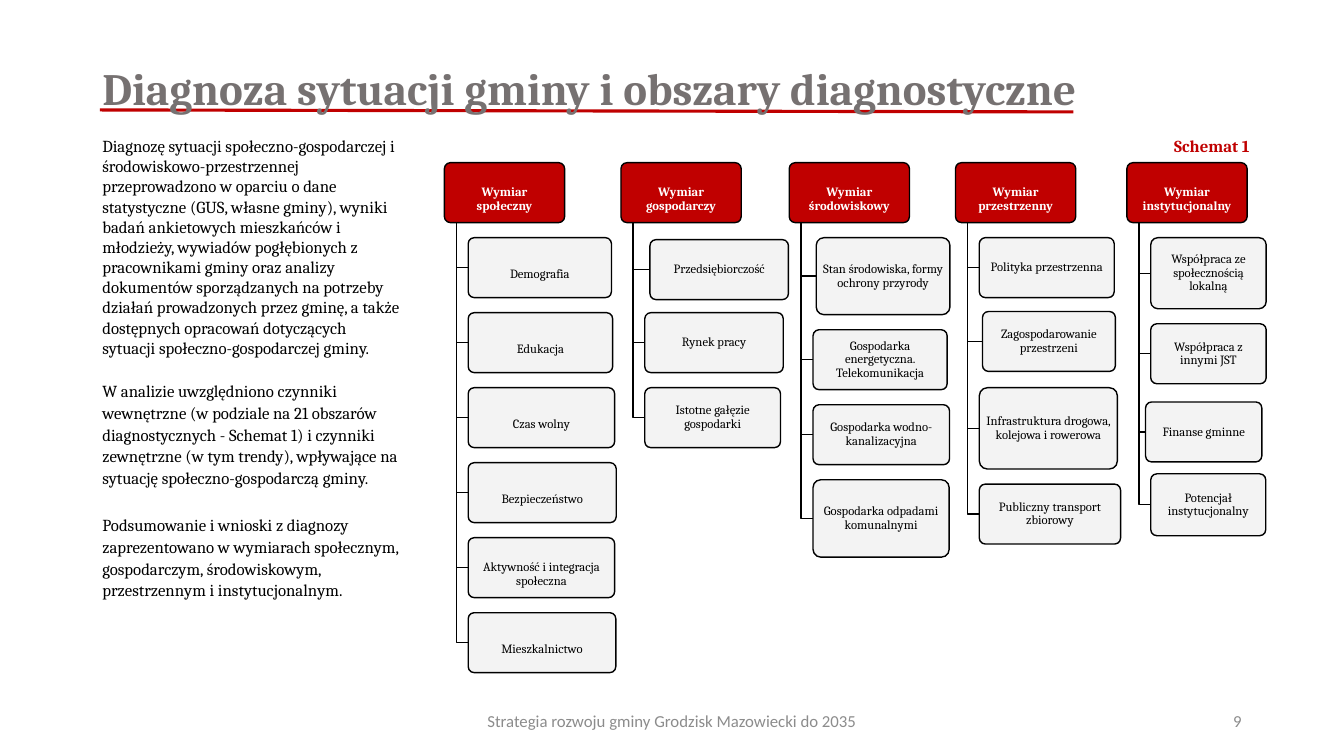
from lxml import etree
from pptx import Presentation
from pptx.dml.color import RGBColor
from pptx.enum.shapes import MSO_CONNECTOR, MSO_SHAPE
from pptx.enum.text import MSO_ANCHOR, PP_ALIGN
from pptx.oxml.ns import qn
from pptx.util import Cm, Pt

STRAIGHT = MSO_CONNECTOR.STRAIGHT
ROUNDED = MSO_SHAPE.ROUNDED_RECTANGLE
TOP, MIDDLE = MSO_ANCHOR.TOP, MSO_ANCHOR.MIDDLE
LEFT, CENTER, RIGHT = PP_ALIGN.LEFT, PP_ALIGN.CENTER, PP_ALIGN.RIGHT

COLORS = {
    "red": "C00000",
    "title": "767171",
    "footer": "8C8C8C",
    "area": "F2F2F2",
    "black": "000000",
    "white": "FFFFFF",
}

TITLE = "Diagnoza sytuacji gminy i obszary diagnostyczne"
FOOTER = "Strategia rozwoju gminy Grodzisk Mazowiecki do 2035"
PAGE_NUMBER = "9"
SCHEME_LABEL = "Schemat 1"

# fmt: off
DESCRIPTION = [
    ("Diagnozę sytuacji społeczno-gospodarczej i środowiskowo-przestrzennej przeprowadzono "
     "w oparciu o dane statystyczne (GUS, własne gminy), wyniki badań ankietowych mieszkańców "
     "i młodzieży, wywiadów pogłębionych z pracownikami gminy oraz analizy dokumentów "
     "sporządzanych na potrzeby działań prowadzonych przez gminę, a także dostępnych opracowań "
     "dotyczących sytuacji społeczno-gospodarczej gminy.", 1.0, 0),
    ("W analizie uwzględniono czynniki wewnętrzne (w podziale na 21 obszarów diagnostycznych "
     "- Schemat 1) i czynniki zewnętrzne (w tym trendy), wpływające na sytuację "
     "społeczno-gospodarczą gminy.", 1.08, 15.5),
    ("Podsumowanie i wnioski z diagnozy zaprezentowano w wymiarach społecznym, gospodarczym, "
     "środowiskowym, przestrzennym i instytucjonalnym.", 1.08, 18),
]

BOX_HEIGHT = 1.51
LOWERED = 0.34

DIMENSIONS = [
    ("społeczny", 11.2, LOWERED, [
        ("Demografia", 3.61, BOX_HEIGHT, 0, 0),
        ("Edukacja", 3.64, BOX_HEIGHT, 0, 0),
        ("Czas wolny", 3.69, BOX_HEIGHT, 0, 0),
        ("Bezpieczeństwo", 3.73, BOX_HEIGHT, 0, 0),
        ("Aktywność i integracja społeczna", 3.69, BOX_HEIGHT, 0, 0),
        ("Mieszkalnictwo", 3.72, BOX_HEIGHT, 0, 0),
    ]),
    ("gospodarczy", 15.65, 0, [
        ("Przedsiębiorczość", 3.49, BOX_HEIGHT, 0.13, 0.05),
        ("Rynek pracy", 3.49, BOX_HEIGHT, 0, 0),
        ("Istotne gałęzie gospodarki", 3.42, BOX_HEIGHT, 0, 0),
    ]),
    ("środowiskowy", 19.89, 0, [
        ("Stan środowiska, formy ochrony przyrody", 3.37, 1.94, 0.08, 0),
        ("Gospodarka energetyczna. Telekomunikacja", 3.38, BOX_HEIGHT, 0, 0),
        ("Gospodarka wodno-kanalizacyjna", 3.44, BOX_HEIGHT, 0, 0),
        ("Gospodarka odpadami komunalnymi", 3.43, 1.95, 0, 0),
    ]),
    ("przestrzenny", 24.08, 0, [
        ("Polityka przestrzenna", 3.4, BOX_HEIGHT, 0, 0),
        ("Zagospodarowanie przestrzeni", 3.35, BOX_HEIGHT, 0.08, -0.03),
        ("Infrastruktura drogowa, kolejowa i rowerowa", 3.48, 2.05, 0, 0),
        ("Publiczny transport zbiorowy", 3.56, BOX_HEIGHT, 0, 0),
    ]),
    ("instytucjonalny", 28.4, 0, [
        ("Współpraca ze społecznością lokalną", 2.91, 1.79, 0, 0),
        ("Współpraca z innymi JST", 2.91, BOX_HEIGHT, 0, 0),
        ("Finanse gminne", 2.93, BOX_HEIGHT, -0.13, 0.08),
        ("Potencjał instytucjonalny", 2.9, 1.56, 0, 0),
    ]),
]
# fmt: on

HEAD_TOP = 4.1
HEAD_WIDTH = 3.03
GAP = 0.38
SPINE_INDENT = 0.3
AREA_INDENT = 0.6


def color(name):
    return RGBColor.from_string(COLORS[name])


def style(paragraph, size, color_name, align=LEFT, bold=False, font="Cambria"):
    paragraph.alignment = align
    paragraph.font.size = Pt(size)
    paragraph.font.name = font
    paragraph.font.bold = bold
    paragraph.font.color.rgb = color(color_name)


def add_frame(slide, left, top, width, height, anchor=TOP):
    frame = slide.shapes.add_textbox(Cm(left), Cm(top), Cm(width), Cm(height)).text_frame
    frame.word_wrap = True
    frame.vertical_anchor = anchor
    return frame


def add_label(slide, text, place, anchor, *look):
    paragraph = add_frame(slide, *place, anchor).paragraphs[0]
    paragraph.text = text
    style(paragraph, *look)
    return paragraph


def outline(shape):
    shape.shadow.inherit = False
    shape.line.color.rgb = color("black")
    shape.line.width = Pt(1)


def add_box(slide, text, left, top, width, height, fill, ink, bold, lowered):
    box = slide.shapes.add_shape(ROUNDED, Cm(left), Cm(top), Cm(width), Cm(height))
    box.adjustments[0] = 0.1
    box.fill.solid()
    box.fill.fore_color.rgb = color(fill)
    outline(box)
    frame = box.text_frame
    frame.word_wrap = True
    frame.vertical_anchor = MIDDLE
    frame.margin_left = frame.margin_right = Cm(0.05)
    frame.margin_top = Cm(0.03 + lowered)
    frame.margin_bottom = Cm(0.03)
    paragraph = frame.paragraphs[0]
    paragraph.text = text
    paragraph.line_spacing = 0.9
    style(paragraph, 9, ink, CENTER, bold)
    return box


def add_branch(slide, spine, start, middle, end):
    builder = slide.shapes.build_freeform(Cm(spine), Cm(start))
    builder.add_line_segments([(Cm(spine), Cm(middle)), (Cm(end), Cm(middle))], close=False)
    branch = builder.convert_to_shape()
    branch.fill.background()
    outline(branch)


def add_dimension(slide, name, left, lowered, areas):
    add_box(slide, f"Wymiar\v{name}", left, HEAD_TOP, HEAD_WIDTH, BOX_HEIGHT,
            "red", "white", True, LOWERED)
    head_bottom = HEAD_TOP + BOX_HEIGHT
    row_top = head_bottom + GAP
    for area, width, height, shift_x, shift_y in areas:
        area_left = left + AREA_INDENT + shift_x
        area_top = row_top + shift_y
        add_branch(slide, left + SPINE_INDENT, head_bottom, area_top + height / 2, area_left)
        box = add_box(slide, area, area_left, area_top, width, height,
                      "area", "black", False, lowered)
        fill_color = box.element.spPr.find(qn("a:solidFill")).find(qn("a:srgbClr"))
        etree.SubElement(fill_color, qn("a:alpha"), val="90000")
        row_top += height + GAP


def main():
    deck = Presentation()
    deck.slide_width, deck.slide_height = Cm(33.87), Cm(19.05)
    slide = deck.slides.add_slide(deck.slide_layouts[6])

    underline = slide.shapes.add_connector(STRAIGHT, Cm(2.52), Cm(2.77), Cm(27.05), Cm(2.82))
    underline.line.color.rgb = color("red")
    underline.line.width = Pt(2.25)
    etree.SubElement(underline.element.spPr, qn("a:effectLst"))

    title = add_label(slide, TITLE, (2.33, 0.97, 29.21, 1.96), MIDDLE, 32, "title", LEFT, True)
    title.line_spacing = Pt(52.8)
    add_label(slide, FOOTER, (11.22, 17.65, 11.43, 1.02), MIDDLE,
              12, "footer", CENTER, False, "Calibri")

    for dimension in DIMENSIONS:
        add_dimension(slide, *dimension)

    description = add_frame(slide, 2.33, 3.3, 8.08, 14.99)
    for index, (text, spacing, before) in enumerate(DESCRIPTION):
        paragraph = description.add_paragraph() if index else description.paragraphs[0]
        paragraph.text = text
        paragraph.line_spacing = spacing
        paragraph.space_before = Pt(before)
        style(paragraph, 12, "black")

    add_label(slide, PAGE_NUMBER, (23.92, 17.65, 7.62, 1.02), MIDDLE,
              12, "footer", RIGHT, False, "Calibri")
    add_label(slide, SCHEME_LABEL, (29.34, 3.3, 4.5, 0.77), TOP, 12, "red", LEFT, True)
    deck.save("out.pptx")


if __name__ == "__main__":
    main()
